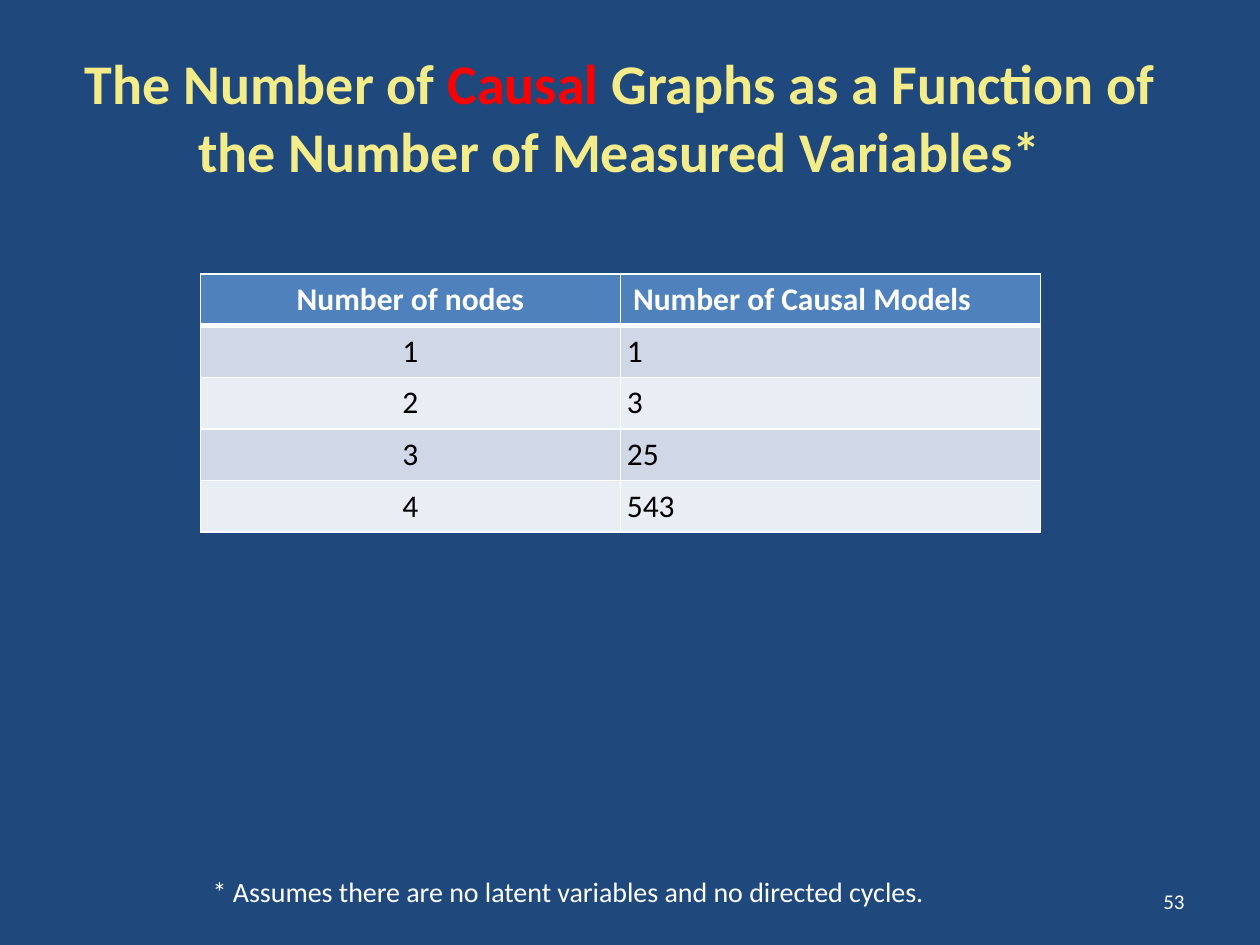
"""Build the slide that counts causal graphs by number of measured variables."""
from dataclasses import dataclass

from lxml import etree
from pptx import Presentation
from pptx.dml.color import RGBColor
from pptx.enum.text import MSO_ANCHOR, PP_ALIGN
from pptx.oxml.ns import qn
from pptx.slide import Slide
from pptx.table import _Cell
from pptx.text.text import _Paragraph
from pptx.util import Emu, Inches, Pt

LEFT, CENTER, RIGHT = PP_ALIGN.LEFT, PP_ALIGN.CENTER, PP_ALIGN.RIGHT
TOP, MIDDLE = MSO_ANCHOR.TOP, MSO_ANCHOR.MIDDLE
WIDTH, HEIGHT = Inches(10), Inches(7.5)


@dataclass(frozen=True)
class Theme:
    """Colours, font and type sizes of the slide."""
    font: str = "Calibri"
    background: str = "1F497D"
    title: str = "F4EC88"
    accent: str = "FF0000"
    light: str = "FFFFFF"
    dark: str = "000000"
    header: str = "4F81BD"
    bands: tuple[str, str] = ("D0D8E8", "E9EDF4")
    title_size: int = 32
    table_size: int = 18
    note_size: int = 16
    number_size: int = 12


THEME = Theme()


@dataclass(frozen=True)
class Box:
    """A rectangle in shares of the slide's width and height."""
    left: float
    top: float
    width: float
    height: float

    def lengths(self) -> tuple[Emu, Emu, Emu, Emu]:
        """Return the rectangle as slide lengths."""
        return (Emu(round(self.left * WIDTH)), Emu(round(self.top * HEIGHT)),
                Emu(round(self.width * WIDTH)), Emu(round(self.height * HEIGHT)))


@dataclass(frozen=True)
class Run:
    """A piece of text in one colour."""
    text: str
    color: str


@dataclass(frozen=True)
class Label:
    """A text box with one paragraph."""
    box: Box
    runs: tuple[Run, ...]
    size: int
    align: PP_ALIGN
    anchor: MSO_ANCHOR
    bold: bool = False


@dataclass(frozen=True)
class CellStyle:
    """The look of a table cell."""
    fill: str
    color: str
    bold: bool
    bottom_line: int
    frame: dict


LABELS = (
    Label(Box(0.05, 0.023, 0.884, 0.2),
          (Run("The Number of ", THEME.title), Run("Causal", THEME.accent),
           Run(" Graphs as a Function of the Number of Measured Variables*", THEME.title)),
          THEME.title_size, CENTER, MIDDLE, True),
    Label(Box(0.159, 0.919, 0.7, 0.05),
          (Run("* Assumes there are no latent variables and no directed cycles.", THEME.light),),
          THEME.note_size, LEFT, TOP),
    Label(Box(0.717, 0.927, 0.233, 0.053), (Run("53", THEME.light),),
          THEME.number_size, RIGHT, MIDDLE),
)
TABLE_BOX = Box(0.159, 0.29, 0.667, 0.273)
ROWS = (("Number of nodes", "Number of Causal Models"),
        ("1", "1"), ("2", "3"), ("3", "25"), ("4", "543"))
COLUMN_ALIGNS = (CENTER, LEFT)
BODY_FRAME = {"vertical_anchor": MIDDLE} | {
    f"margin_{side}": Inches(0.05) for side in ("left", "top", "right", "bottom")}
HEADER_STYLE = CellStyle(THEME.header, THEME.light, True, 3, {})
BODY_STYLES = tuple(CellStyle(band, THEME.dark, False, 1, BODY_FRAME) for band in THEME.bands)


def set_attributes(target: object, values: dict) -> None:
    """Set each named attribute of the target."""
    for name, value in values.items():
        setattr(target, name, value)


def add_run(paragraph: _Paragraph, content: Run, size: int, bold: bool) -> None:
    """Append a formatted run to a paragraph."""
    run = paragraph.add_run()
    run.text = content.text
    set_attributes(run.font, {"name": THEME.font, "size": Pt(size), "bold": bold})
    run.font.color.rgb = RGBColor.from_string(content.color)


def add_label(slide: Slide, label: Label) -> None:
    """Draw a text box."""
    frame = slide.shapes.add_textbox(*label.box.lengths()).text_frame
    set_attributes(frame, {"word_wrap": True, "vertical_anchor": label.anchor})
    paragraph = frame.paragraphs[0]
    paragraph.alignment = label.align
    for content in label.runs:
        add_run(paragraph, content, label.size, label.bold)


def add_border(cell: _Cell, side: str, points: int) -> None:
    """Add a solid line to one side of a cell."""
    properties = cell._tc.get_or_add_tcPr()
    line = etree.SubElement(properties, qn(f"a:ln{side}"), w=str(Pt(points)))
    fill = etree.SubElement(line, qn("a:solidFill"))
    etree.SubElement(fill, qn("a:srgbClr"), val=THEME.light)


def fill_cell(cell: _Cell, text: str, align: PP_ALIGN, style: CellStyle, top_line: int) -> None:
    """Write and format one table cell."""
    set_attributes(cell, style.frame)
    for side, points in {"L": 1, "R": 1, "T": top_line, "B": style.bottom_line}.items():
        add_border(cell, side, points)
    cell.fill.solid()
    cell.fill.fore_color.rgb = RGBColor.from_string(style.fill)
    paragraph = cell.text_frame.paragraphs[0]
    paragraph.alignment = align
    add_run(paragraph, Run(text, style.color), THEME.table_size, style.bold)


def add_count_table(slide: Slide) -> None:
    """Draw the table of causal model counts."""
    table = slide.shapes.add_table(len(ROWS), len(COLUMN_ALIGNS), *TABLE_BOX.lengths()).table
    top_line = 1
    for row, texts in enumerate(ROWS):
        style = BODY_STYLES[(row - 1) % len(BODY_STYLES)] if row else HEADER_STYLE
        for column, (text, align) in enumerate(zip(texts, COLUMN_ALIGNS)):
            fill_cell(table.cell(row, column), text, align, style, top_line)
        top_line = style.bottom_line


def main() -> None:
    """Build and save the presentation."""
    presentation = Presentation()
    set_attributes(presentation, {"slide_width": WIDTH, "slide_height": HEIGHT})
    slide = presentation.slides.add_slide(presentation.slide_layouts[6])
    slide.background.fill.solid()
    slide.background.fill.fore_color.rgb = RGBColor.from_string(THEME.background)
    add_count_table(slide)
    for label in LABELS:
        add_label(slide, label)
    presentation.save("out.pptx")


if __name__ == "__main__":
    main()
